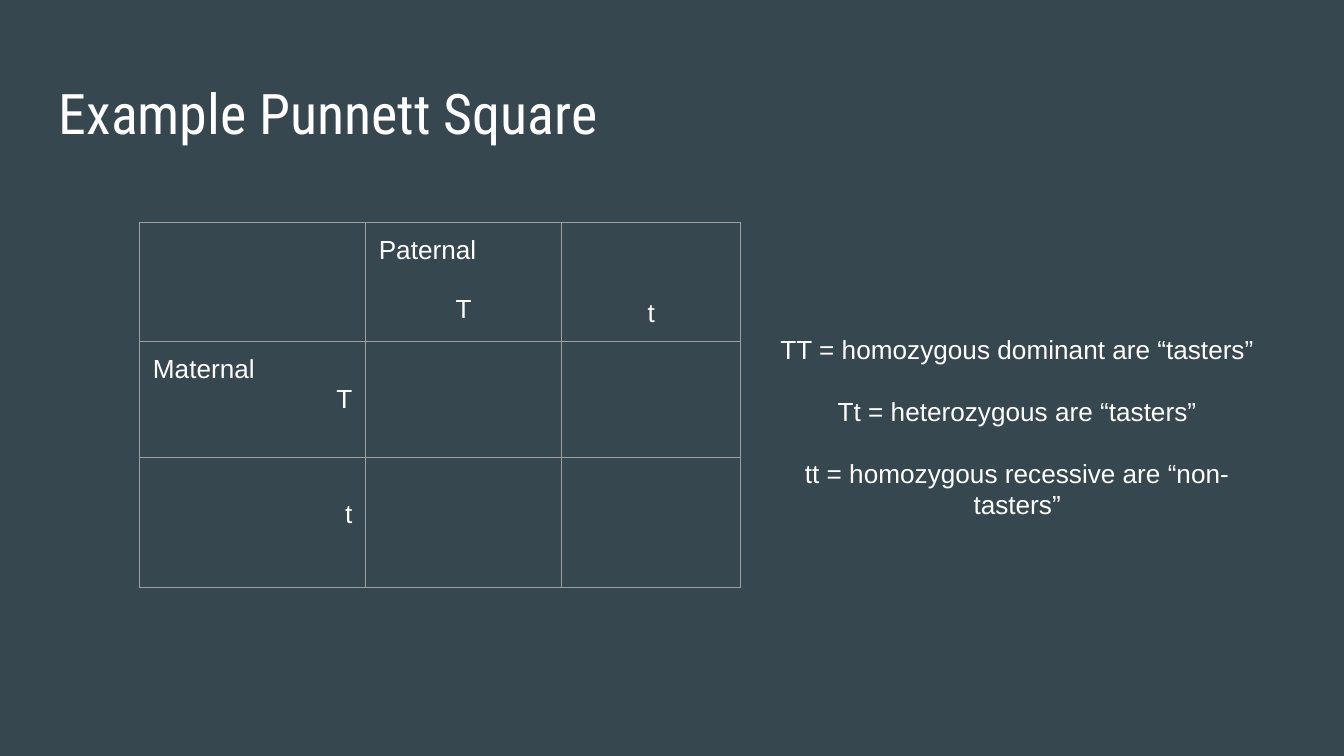
import pptx
import pptx.dml.color
import pptx.enum.text
import pptx.oxml
import pptx.oxml.ns
import pptx.util
from pptx.util import Cm

COLORS = {"background": "37474F", "text": "FFFFFF", "border": "9E9E9E"}
INSET = Cm(0.25)
LINE = pptx.util.Pt(16)
ALIGN = pptx.enum.text.PP_ALIGN
ANCHOR = pptx.enum.text.MSO_ANCHOR


def rgb(name):
    return pptx.dml.color.RGBColor.from_string(COLORS[name])


def write(tf, lines, size=14, font="Arial", gap=0):
    """Fill a text frame with (text, alignment) lines, gap apart."""
    tf.text = "\n".join(text for text, _ in lines)
    for i, (p, (_, align)) in enumerate(zip(tf.paragraphs, lines)):
        p.alignment = align
        if i and gap:
            p.space_before = gap
        for r in p.runs:
            r.font.size = pptx.util.Pt(size)
            r.font.name = font
            r.font.color.rgb = rgb("text")


def add_text(s, box, lines, top=INSET, **style):
    tf = s.shapes.add_textbox(*map(Cm, box)).text_frame
    tf.word_wrap = True
    tf.margin_left = tf.margin_right = tf.margin_bottom = INSET
    tf.margin_top = top
    write(tf, lines, **style)
    return tf


def set_borders(cell):
    tcPr = cell._tc.get_or_add_tcPr()
    for i, side in enumerate(("lnL", "lnR", "lnT", "lnB")):
        tcPr.insert(i, pptx.oxml.parse_xml(
            f'<a:{side} {pptx.oxml.ns.nsdecls("a")} w="{pptx.util.Pt(0.75)}">'
            f'<a:solidFill><a:srgbClr val="{COLORS["border"]}"/></a:solidFill>'
            f'</a:{side}>'))


def add_punnett_square(s):
    widths, heights = (4.27, 3.71, 3.38), (2.17, 2.18, 2.47)
    table = s.shapes.add_table(3, 3, Cm(2.64), Cm(4.21), Cm(sum(widths)),
                               Cm(sum(heights))).table
    table.first_row = table.horz_banding = False
    for col, width in zip(table.columns, widths):
        col.width = Cm(width)
    for row, height in zip(table.rows, heights):
        row.height = Cm(height)
    for cell in table.iter_cells():
        cell.fill.background()
        cell.margin_left = cell.margin_right = INSET
        cell.margin_top = cell.margin_bottom = INSET
        set_borders(cell)

    write(table.cell(0, 1).text_frame,
          [("Paternal", ALIGN.LEFT), ("T", ALIGN.CENTER)], gap=LINE)
    write(table.cell(0, 2).text_frame, [("t", ALIGN.CENTER)])
    table.cell(0, 2).vertical_anchor = ANCHOR.BOTTOM
    write(table.cell(1, 0).text_frame,
          [("Maternal", ALIGN.LEFT), ("T", ALIGN.RIGHT)])
    write(table.cell(2, 0).text_frame, [("t", ALIGN.RIGHT)])
    table.cell(2, 0).margin_top = INSET + LINE


def add_genotype_key(s):
    spacing = pptx.util.Pt(16.7)
    lines = ["TT = homozygous dominant are “tasters”",
             "Tt = heterozygous are “tasters”",
             "tt = homozygous recessive are “non-tasters”"]
    tf = add_text(s, (14.45, 3.66, 9.55, 8.69),
                  [(line, ALIGN.CENTER) for line in lines],
                  top=Cm(2.64), gap=spacing)
    for p in tf.paragraphs:
        p.line_spacing = spacing


def main():
    prs = pptx.Presentation()
    prs.slide_width, prs.slide_height = Cm(25.4), Cm(14.29)
    s = prs.slides.add_slide(prs.slide_layouts[6])
    s.background.fill.solid()
    s.background.fill.fore_color.rgb = rgb("background")
    add_text(s, (0.86, 1.24, 23.67, 1.6),
             [("Example Punnett Square", ALIGN.LEFT)],
             size=30, font="Roboto Condensed")
    add_punnett_square(s)
    add_genotype_key(s)
    prs.save("out.pptx")


if __name__ == "__main__":
    main()
